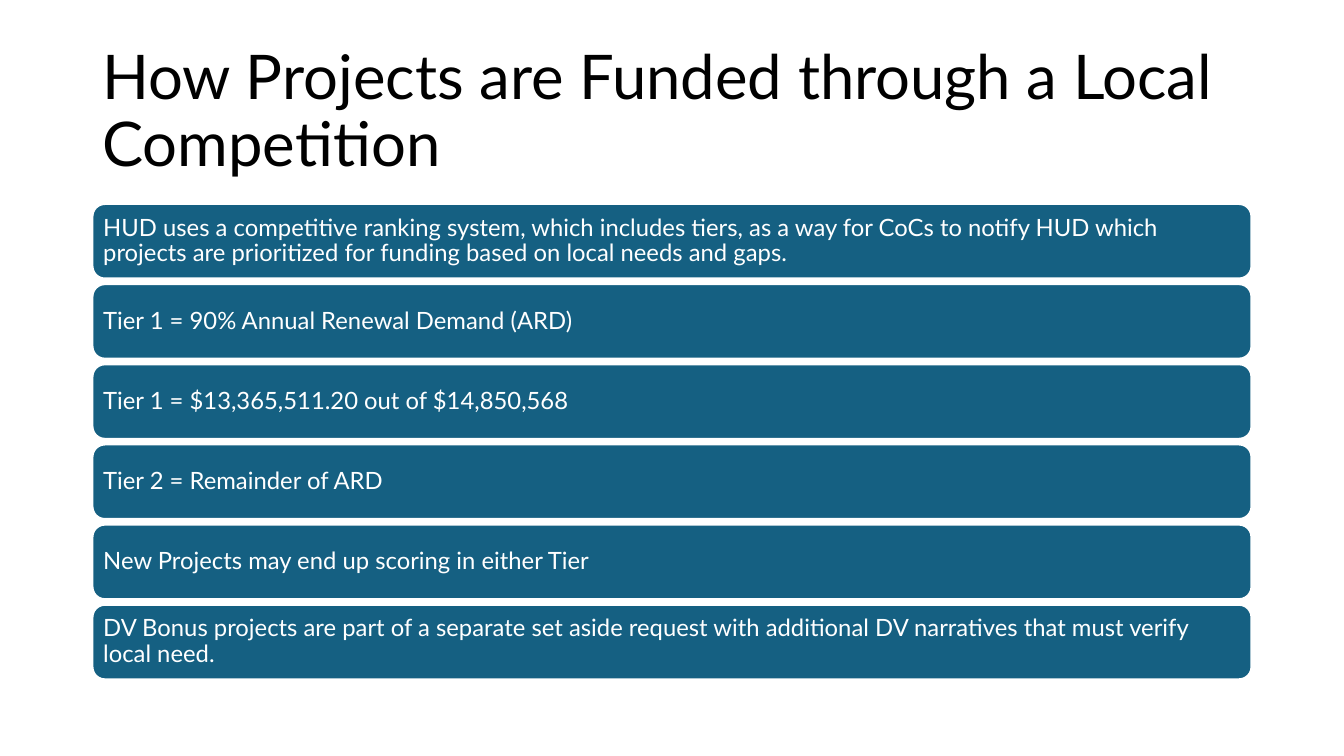
from pptx import Presentation
from pptx.dml.color import RGBColor
from pptx.enum.shapes import MSO_SHAPE
from pptx.enum.text import MSO_ANCHOR, PP_ALIGN
from pptx.util import Cm, Pt

TITLE = "How Projects are Funded through a Local Competition"
POINTS = [
    "HUD uses a competitive ranking system, which includes tiers, as a way for CoCs "
    "to notify HUD which projects are prioritized for funding based on local needs and gaps.",
    "Tier 1 = 90% Annual Renewal Demand (ARD)",
    "Tier 1 = $13,365,511.20 out of $14,850,568",
    "Tier 2 = Remainder of ARD",
    "New Projects may end up scoring in either Tier",
    "DV Bonus projects are part of a separate set aside request with additional "
    "DV narratives that must verify local need.",
]
FONT = "Lato"
BLACK, WHITE, BLUE = "000000", "FFFFFF", "156082"

LEFT, WIDTH = 2.33, 29.21
TITLE_TOP, TITLE_HEIGHT = 1.01, 3.68
BAR_TOP, BAR_HEIGHT, BAR_GAP = 5.14, 1.88, 0.14
BAR_INSET = 0.18


def color(hex_string):
    return RGBColor.from_string(hex_string)


def write(shape, text, size, text_color):
    frame = shape.text_frame
    frame.text = text
    frame.word_wrap = True
    frame.vertical_anchor = MSO_ANCHOR.MIDDLE
    para = frame.paragraphs[0]
    para.alignment = PP_ALIGN.LEFT
    para.line_spacing = 0.9
    font = para.runs[0].font
    font.name = FONT
    font.size = Pt(size)
    font.color.rgb = color(text_color)


def add_bar(slide, top, text):
    bar = slide.shapes.add_shape(
        MSO_SHAPE.ROUNDED_RECTANGLE, Cm(LEFT), Cm(top), Cm(WIDTH), Cm(BAR_HEIGHT))
    bar.shadow.inherit = False
    bar.fill.solid()
    bar.fill.fore_color.rgb = color(BLUE)
    bar.line.color.rgb = color(WHITE)
    bar.line.width = Pt(1.5)
    write(bar, text, 17, WHITE)
    frame = bar.text_frame
    frame.margin_left = frame.margin_right = Cm(BAR_INSET)
    frame.margin_top = frame.margin_bottom = Cm(BAR_INSET)


def main():
    deck = Presentation()
    deck.slide_width, deck.slide_height = Cm(33.87), Cm(19.05)
    slide = deck.slides.add_slide(deck.slide_layouts[6])

    title = slide.shapes.add_textbox(
        Cm(LEFT), Cm(TITLE_TOP), Cm(WIDTH), Cm(TITLE_HEIGHT))
    write(title, TITLE, 44, BLACK)

    for index, text in enumerate(POINTS):
        add_bar(slide, BAR_TOP + index * (BAR_HEIGHT + BAR_GAP), text)

    deck.save("out.pptx")


if __name__ == "__main__":
    main()
